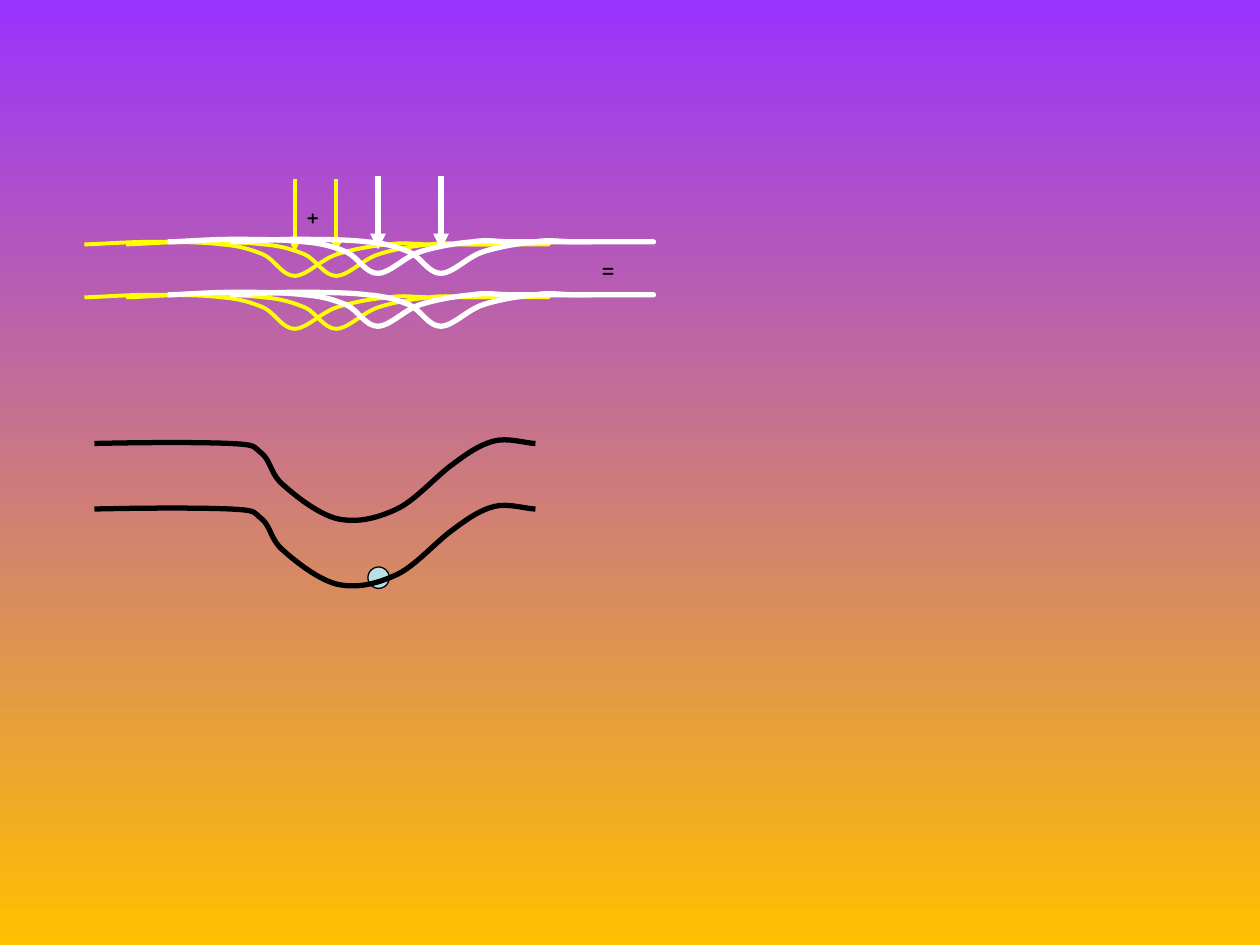
from dataclasses import dataclass

from lxml.etree import SubElement
from pptx import Presentation
from pptx.dml.color import RGBColor
from pptx.enum.shapes import MSO_CONNECTOR, MSO_SHAPE
from pptx.enum.text import MSO_AUTO_SIZE
from pptx.oxml.ns import qn
from pptx.util import Inches, Pt


@dataclass(frozen=True)
class Theme:
    sky: RGBColor = RGBColor(0x99, 0x33, 0xFF)
    ground: RGBColor = RGBColor(0xFF, 0xC0, 0x00)
    first_pair: RGBColor = RGBColor(0xFF, 0xFF, 0x00)
    second_pair: RGBColor = RGBColor(0xFF, 0xFF, 0xFF)
    ink: RGBColor = RGBColor(0x00, 0x00, 0x00)
    ball: RGBColor = RGBColor(0xBB, 0xE0, 0xE3)
    font: str = "Comic Neue"
    symbol_size: Pt = Pt(18)
    thin: Pt = Pt(2.25)
    thick: Pt = Pt(3)
    outline: Pt = Pt(0.75)


THEME = Theme()

DIP = [
    (0, 0.02),
    (0.09, 0.02), (0.33, 0), (0.51, 0),
    (0.69, 0), (0.93, 0), (1.08, 0.02),
    (1.23, 0.03), (1.32, 0.06), (1.42, 0.1),
    (1.51, 0.14), (1.57, 0.27), (1.67, 0.27),
    (1.76, 0.27), (1.88, 0.14), (2, 0.1),
    (2.12, 0.06), (2.29, 0.03), (2.42, 0.02),
    (2.54, 0), (2.6, 0.02), (2.75, 0.02),
    (2.9, 0.02), (3.25, 0.02), (3.33, 0.02),
    (3.42, 0.02), (3.26, 0.02), (3.25, 0.02),
]
BASIN = [
    (0, 0.05),
    (0.43, 0.04), (0.86, 0.04), (1.08, 0.05),
    (1.31, 0.06), (1.26, 0.08), (1.33, 0.13),
    (1.4, 0.19), (1.4, 0.3), (1.5, 0.38),
    (1.6, 0.47), (1.79, 0.62), (1.94, 0.65),
    (2.1, 0.68), (2.25, 0.64), (2.4, 0.57),
    (2.55, 0.5), (2.72, 0.3), (2.85, 0.21),
    (2.97, 0.12), (3.06, 0.06), (3.17, 0.03),
    (3.28, 0), (3.43, 0.05), (3.5, 0.05),
]


def add_curve(shapes, left, top, points, color, width):
    start, *controls = [(left + Inches(x), top + Inches(y)) for x, y in points]
    builder = shapes.build_freeform(*start)
    builder.add_line_segments(controls, close=False)
    curve = builder.convert_to_shape()
    curve.shadow.inherit = False
    curve.fill.background()
    curve.line.color.rgb = color
    curve.line.width = width
    outline = curve._element.find(".//" + qn("a:path"))
    segments = outline.findall(qn("a:lnTo"))
    for index in range(0, len(segments), 3):
        bezier = SubElement(outline, qn("a:cubicBezTo"))
        for segment in segments[index:index + 3]:
            bezier.append(segment[0])
            outline.remove(segment)


def add_arrow(shapes, x, top, bottom, color, width):
    arrow = shapes.add_connector(MSO_CONNECTOR.STRAIGHT, x, top, x, bottom)
    arrow.line.color.rgb = color
    arrow.line.width = width
    SubElement(arrow.line._get_or_add_ln(), qn("a:tailEnd"), type="triangle")
    SubElement(arrow._element.spPr, qn("a:effectLst"))


def add_loaded_beam(slide, left, top, color, width):
    shapes = slide.shapes.add_group_shape().shapes
    add_curve(shapes, left, top, DIP, color, width)
    add_arrow(shapes, left + Inches(1.67), top - Inches(0.5), top + Inches(0.08), color, width)
    add_curve(shapes, left, top + Inches(0.42), DIP, color, width)


def add_symbol(slide, left, top, width, height, text):
    frame = slide.shapes.add_textbox(left, top, width, height).text_frame
    frame.word_wrap = True
    frame.auto_size = MSO_AUTO_SIZE.SHAPE_TO_FIT_TEXT
    paragraph = frame.paragraphs[0]
    paragraph.text = text
    paragraph.font.name = THEME.font
    paragraph.font.size = THEME.symbol_size
    paragraph.font.color.rgb = THEME.ink


def add_superposition(slide, left, top):
    for offset in (0.33, 0):
        add_loaded_beam(slide, left + Inches(offset), top, THEME.first_pair, THEME.thin)
    add_symbol(slide, left + Inches(1.66), top - Inches(0.42), Inches(0.25), Inches(0.4), "+")
    add_symbol(slide, left + Inches(4), top, Inches(1), Inches(0.4), "=")
    for offset in (0.66, 1.16):
        add_loaded_beam(
            slide, left + Inches(offset), top - Inches(0.02), THEME.second_pair, THEME.thick
        )


def add_combined_basin(slide, left, top):
    add_curve(slide.shapes, left, top, BASIN, THEME.ink, THEME.thick)
    diameter = Inches(0.17)
    ball = slide.shapes.add_shape(
        MSO_SHAPE.OVAL, left + Inches(2.17), top + Inches(1.03), diameter, diameter
    )
    ball.shadow.inherit = False
    ball.fill.solid()
    ball.fill.fore_color.rgb = THEME.ball
    ball.line.color.rgb = THEME.ink
    ball.line.width = THEME.outline
    add_curve(slide.shapes, left, top + Inches(0.52), BASIN, THEME.ink, THEME.thick)


def paint_background(slide):
    fill = slide.background.fill
    fill.gradient()
    fill.gradient_angle = 270
    for stop, color, position in zip(fill.gradient_stops, (THEME.sky, THEME.ground), (0, 1)):
        stop.color.rgb = color
        stop.position = position


def main():
    presentation = Presentation()
    presentation.slide_width = Inches(10)
    presentation.slide_height = Inches(7.5)
    slide = presentation.slides.add_slide(presentation.slide_layouts.get_by_name("Blank"))
    paint_background(slide)
    add_superposition(slide, Inches(0.67), Inches(1.92))
    add_combined_basin(slide, Inches(0.75), Inches(3.47))
    presentation.save("out.pptx")


if __name__ == "__main__":
    main()
